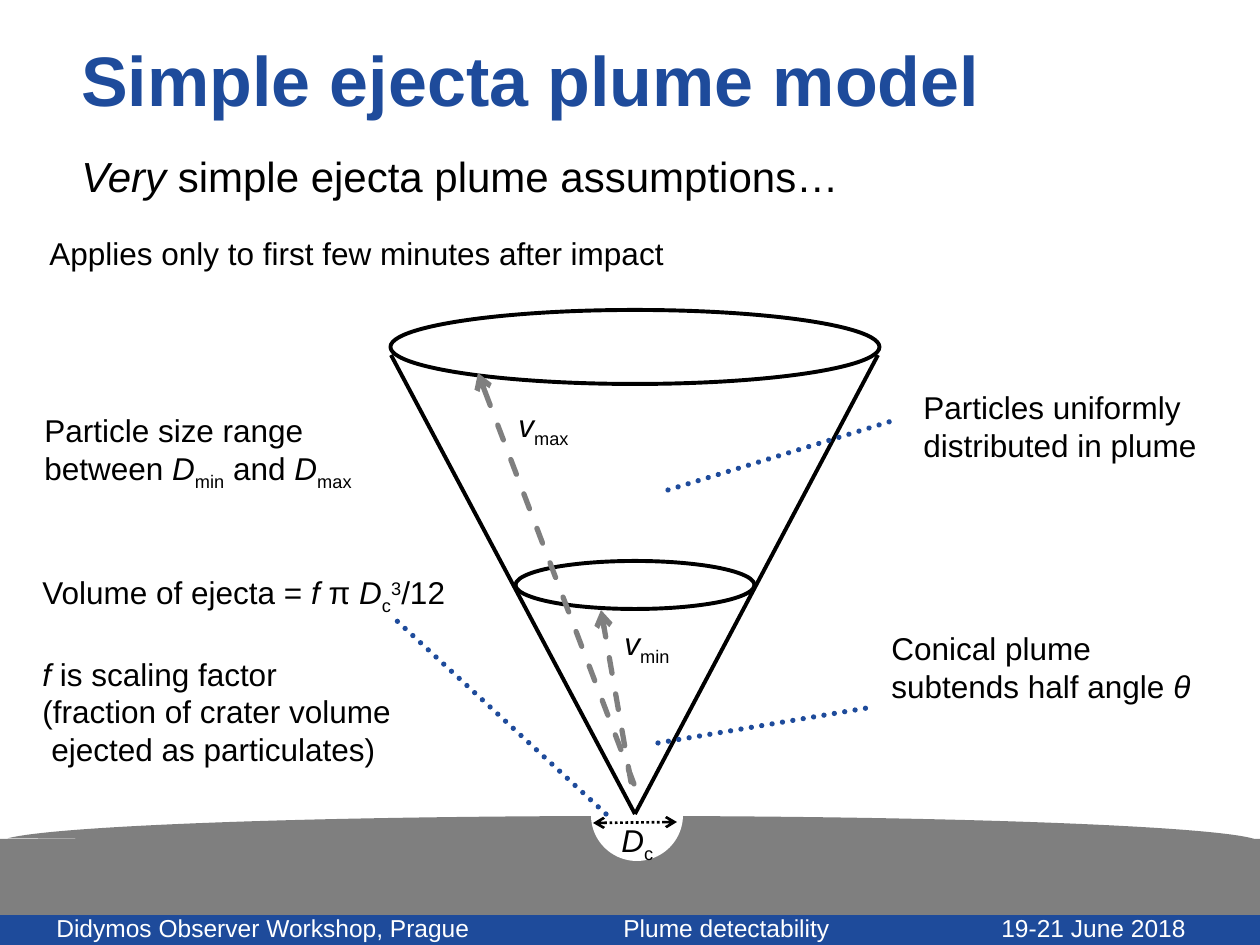
from lxml.etree import SubElement
from pptx import Presentation
from pptx.dml.color import RGBColor
from pptx.enum.dml import MSO_LINE as DASH
from pptx.enum.shapes import MSO_CONNECTOR, MSO_SHAPE as SHAPE
from pptx.oxml.ns import qn
from pptx.util import Emu, Pt

COLORS = {"blue": "1E4B9B", "black": "000000", "white": "FFFFFF", "gray": "7F7F7F"}
BASELINES = {"sub": "-25000", "sup": "30000"}
FONT = "Arial"


def px(n):
    """Turn pixels into EMU."""
    return Emu(round(n * 914400 / 126))


def rgb(name):
    """Look up a named colour."""
    return RGBColor.from_string(COLORS[name])


def add_text(s, x, y, w, h, lines, size=18, color="black", bold=False, wrap=False):
    """Add a text box; each line is a list of (text, style) runs."""
    tf = s.shapes.add_textbox(px(x), px(y), px(w), px(h)).text_frame
    tf.word_wrap = wrap
    for i, line in enumerate(lines):
        p = tf.paragraphs[0] if i == 0 else tf.add_paragraph()
        for text, style in line:
            r = p.add_run()
            r.text = text
            r.font.name, r.font.size, r.font.bold = FONT, Pt(size), bold
            r.font.color.rgb = rgb(color)
            r.font.italic = style == "i"
            if style in BASELINES:
                r.font._element.set("baseline", BASELINES[style])
    return tf


def add_shape(s, kind, x, y, w, h, fill=None, line=None, width=1, adj=()):
    """Add a preset shape with optional fill, outline and adjustments."""
    sp = s.shapes.add_shape(kind, px(x), px(y), px(w), px(h))
    sp.shadow.inherit = False
    for i, value in enumerate(adj):
        sp.adjustments[i] = value
    if fill:
        sp.fill.solid()
        sp.fill.fore_color.rgb = rgb(fill)
    else:
        sp.fill.background()
    if line:
        sp.line.color.rgb = rgb(line)
        sp.line.width = Pt(width)
    else:
        sp.line.fill.background()


def add_line(s, x1, y1, x2, y2, color="black", width=2.25, dash=None, ends=(), cap="flat"):
    """Add a straight line with optional dashes and arrowheads."""
    c = s.shapes.add_connector(MSO_CONNECTOR.STRAIGHT, px(x1), px(y1), px(x2), px(y2))
    c.line.color.rgb = rgb(color)
    c.line.width = Pt(width)
    if dash:
        c.line.dash_style = dash
    ln = c.line._get_or_add_ln()
    ln.set("cap", cap)
    for end in ends:
        SubElement(ln, qn(f"a:{end}"), type="arrow")
    SubElement(c._element.spPr, qn("a:effectLst"))


def add_leader(s, x1, y1, x2, y2):
    """Add a dotted blue leader from a part to its note."""
    add_line(s, x1, y1, x2, y2, "blue", 3, DASH.ROUND_DOT, cap="rnd")


def add_footer(s, x, y, w, h):
    """Draw the footer band with its three tabbed entries."""
    add_shape(s, SHAPE.RECTANGLE, x, y, w, h, "blue", "blue")
    entries = "Didymos Observer Workshop, Prague\tPlume detectability\t19-21 June 2018"
    tf = add_text(s, x + 44, y - 9, w - 103, h + 14, [[(entries, "")]], 14, "white", wrap=True)
    tabs = SubElement(tf.paragraphs[0]._p.get_or_add_pPr(), qn("a:tabLst"))
    for stop in (567, 945):
        SubElement(tabs, qn("a:tab"), pos=str(px(stop)), algn="l")


def add_heading(s, x, y, w, h):
    """Place the title and the lead line below it."""
    title = add_text(s, x, y, w, 81, [[("Simple ejecta plume model", "")]], 40, "blue", True, True)
    lead = [("Very", "i"), (" simple ejecta plume assumptions…", "")]
    sub = add_text(s, x, y + 110, w, h - 110, [lead], 24, wrap=True)
    for tf in (title, sub):
        tf.paragraphs[0].line_spacing = 0.9


def add_ground(s, x, y, w, h):
    """Draw the curved surface, the crater and its diameter."""
    add_shape(s, SHAPE.RECTANGLE, x, y + 23, w, h - 23, "gray")
    add_shape(s, SHAPE.ARC, x, y, w, 53, "gray", adj=(108.23, 215.8))
    add_shape(s, SHAPE.CHORD, x + 591, y - 47, 92, 92, "white", adj=(215.78, 108))
    add_line(s, x + 593, y + 7, x + 677, y + 6, width=1.5, dash=DASH.ROUND_DOT,
             ends=("headEnd", "tailEnd"))
    add_text(s, x + 609, y - 1, 59, 50, [[("D", "i"), ("c", "sub")]])


def add_plume(s, x, y, w, h):
    """Draw the cone, its two rims and the velocity arrows."""
    mid = x + w // 2
    for top, rim_w, rim_h in ((0, w, 74), (251, 239, 48)):
        add_shape(s, SHAPE.OVAL, mid - rim_w / 2, y + top, rim_w, rim_h, line="black", width=2.25)
    for edge in (x, x + w - 2):
        add_line(s, edge, y + 45, mid, y + h)
    for x1, y1, x2, y2 in ((243, 474, 87, 63), (240, 472, 210, 300)):
        add_line(s, x + x1, y + y1, x + x2, y + y2, "gray", 3, DASH.DASH, ("tailEnd",), "rnd")
    for left, top, width, label in ((115, 90, 82, "max"), (221, 308, 76, "min")):
        add_text(s, x + left, y + top, width, 50, [[("v", "i"), (label, "sub")]])


def add_left_notes(s, x, y, w, h):
    """Place the notes on timing, particle size and ejecta volume."""
    add_text(s, x + 7, y, 645, 50, [[("Applies only to first few minutes after impact", "")]])
    add_text(s, x + 2, y + 177, 354, 89, [
        [("Particle size range", "")],
        [("between ", ""), ("D", "i"), ("min", "sub"), (" and ", ""), ("D", "i"), ("max", "sub")],
    ])
    tf = add_text(s, x, y + 339, w, h - 339, [
        [("Volume of ejecta = ", ""), ("f", "i"), (" π ", ""), ("D", "i"), ("c", "sub"),
         ("3", "sup"), ("/12", "")],
        [("f", "i"), (" is scaling factor", "")],
        [("(fraction of crater volume", "")],
        [("ejected as particulates)", "")],
    ])
    tf.paragraphs[1].space_before = Pt(22)
    tf.paragraphs[3]._p.get_or_add_pPr().set("marL", str(px(9)))
    add_leader(s, x + 576, y + 586, x + 366, y + 392)


def add_right_notes(s, x, y, w, h):
    """Place the notes on distribution and cone angle."""
    add_text(s, x + 32, y, w - 35, 89,
             [[("Particles uniformly", "")], [("distributed in plume", "")]])
    add_leader(s, x - 211, y + 108, x + 13, y + 39)
    add_text(s, x, y + h - 89, w, 89,
             [[("Conical plume", "")], [("subtends half angle ", ""), ("θ", "i")]])
    add_leader(s, x - 221, y + 361, x - 12, y + 326)


def main():
    """Build the slide and save it."""
    prs = Presentation()
    prs.slide_width, prs.slide_height = px(1260), px(945)
    s = prs.slides.add_slide(prs.slide_layouts[6])
    add_footer(s, 0, 916, 1260, 29)
    add_heading(s, 69, 40, 956, 152)
    add_ground(s, 0, 816, 1260, 99)
    add_plume(s, 391, 310, 489, 504)
    add_left_notes(s, 30, 228, 435, 543)
    add_right_notes(s, 879, 382, 336, 330)
    prs.save("out.pptx")


if __name__ == "__main__":
    main()
